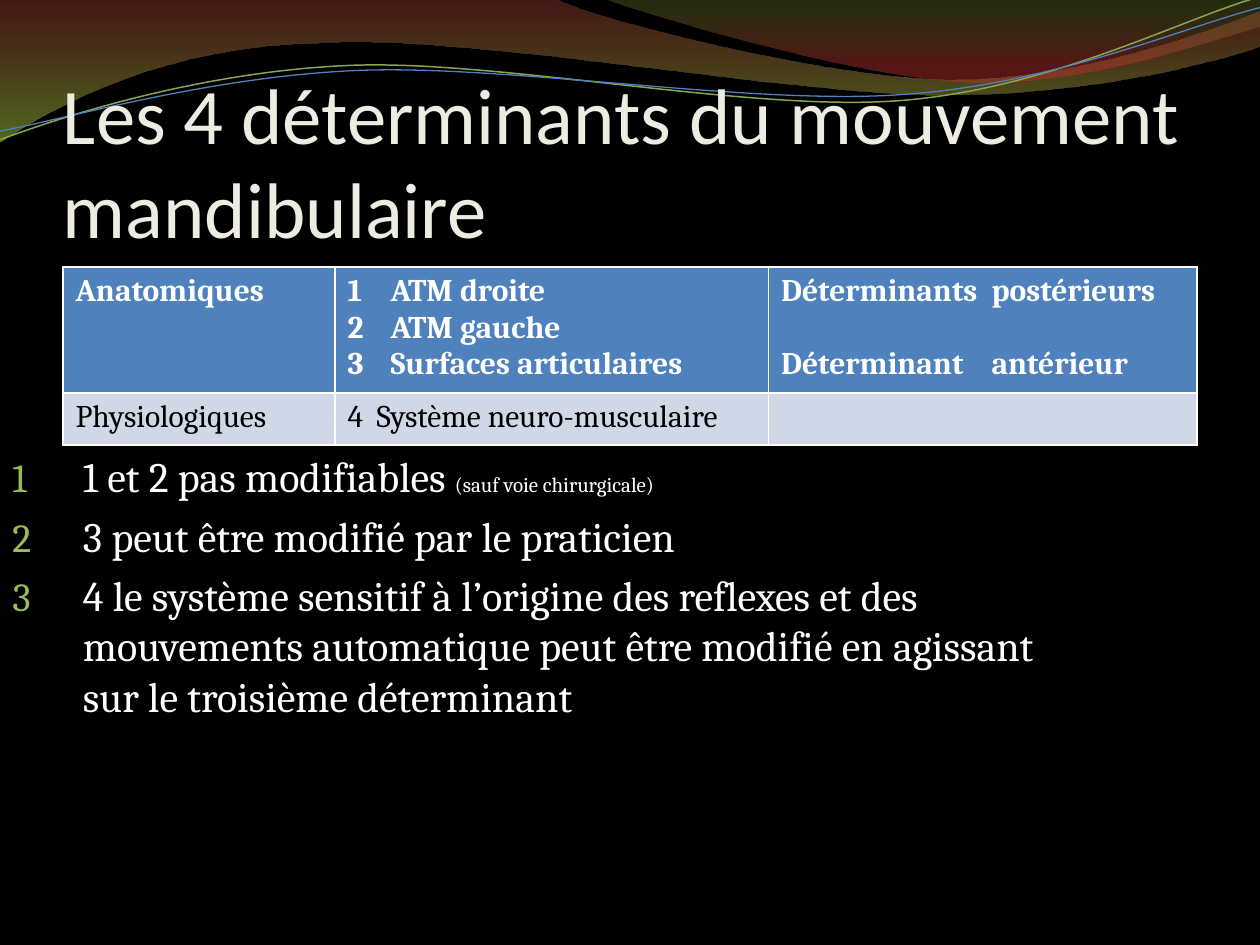
import pptx
import pptx.dml.color
import pptx.enum.text
import pptx.oxml
import pptx.oxml.ns
import pptx.util
from pptx.dml.color import RGBColor
from pptx.util import Inches

BLACK = RGBColor(0, 0, 0)
WHITE = RGBColor(255, 255, 255)
CREAM = RGBColor(0xEE, 0xEC, 0xE1)
BLUE = RGBColor(0x4F, 0x81, 0xBD)
PALE_BLUE = RGBColor(0xD0, 0xD8, 0xE8)
GREEN = RGBColor(0x9B, 0xBB, 0x59)
LINE_GREEN = RGBColor(0x89, 0xA5, 0x4F)
WAVE_RED = RGBColor(0x97, 0x33, 0x30)
WAVE_GREEN = RGBColor(0x95, 0xC2, 0x38)
VALLEY_GREEN = RGBColor(0x76, 0x95, 0x37)
VALLEY_RED = RGBColor(0xBE, 0x33, 0x30)

WAVE = [(0, 0), (4.4, -0.01),
        (4.76, 0.17, 6.64, 0.63, 7.58, 0.63), (8.53, 0.63, 9.58, 0.26, 10, 0.09), (10.01, 0.36),
        (9.83, 0.44, 8.7, 0.76, 7.46, 0.75), (6.22, 0.75, 3.82, 0.28, 2.57, 0.34),
        (1.29, 0.36, 0.46, 0.83, -0.01, 1.13)]
VALLEY = [(4.79, -0.01), (5.09, 0.11, 6.82, 0.62, 7.69, 0.65),
          (8.56, 0.69, 9.61, 0.32, 10, 0.21), (10, 0)]
GREEN_CURVE = [(0, 1.11), (0.48, 0.93, 1.58, 0.57, 2.77, 0.52),
               (3.95, 0.47, 5.93, 0.89, 7.13, 0.8), (8.33, 0.71, 9.38, 0.15, 9.98, -0.02)]
BLUE_CURVE = [(0, 1.04), (0.47, 0.96, 1.64, 0.61, 2.83, 0.56),
              (4.03, 0.51, 5.97, 0.84, 7.17, 0.75), (8.36, 0.67, 9.41, 0.21, 10, 0.06)]

HEADER_ROW = (["Anatomiques"],
              ["1\tATM droite", "2\tATM gauche", "3\tSurfaces articulaires"],
              ["Déterminants\tpostérieurs", "Déterminant\tantérieur"])
BODY_ROW = (["Physiologiques"], ["4\tSystème neuro-musculaire"], [])
POINTS = [
    [("1 et 2 pas modifiables ", 24), ("(sauf voie chirurgicale)", 12)],
    [("3 peut être modifié par le praticien", 24)],
    [("4 le système sensitif à l’origine des reflexes et des mouvements automatique "
      "peut être modifié en agissant sur le troisième déterminant", 24)],
]


def element(markup):
    """Parse one drawing element."""
    namespace = pptx.oxml.ns.nsdecls("a")
    return pptx.oxml.parse_xml(markup.replace(" ", f" {namespace} ", 1))


def add_run(paragraph, text, size, font, color, bold=False):
    """Add one formatted run."""
    run = paragraph.add_run()
    run.text = text
    run.font.name = font
    run.font.size = pptx.util.Pt(size)
    run.font.bold = bold
    run.font.color.rgb = color


def add_curve(slide, left, top, segments, closed):
    """Draw an outline of corners and cubic curves relative to a corner."""
    anchors = [(Inches(left + segment[-2]), Inches(top + segment[-1])) for segment in segments]
    builder = slide.shapes.build_freeform(*anchors[0])
    builder.add_line_segments(anchors[1:], close=closed)
    shape = builder.convert_to_shape()
    shape.shadow.inherit = False
    lines = list(shape._element.iter(pptx.oxml.ns.qn("a:lnTo")))
    for line, segment in zip(lines, segments[1:]):
        if len(segment) == 6:
            points = "".join(
                f'<a:pt x="{Inches(left + x) - shape.left}" y="{Inches(top + y) - shape.top}"/>'
                for x, y in zip(segment[::2], segment[1::2]))
            line.getparent().replace(
                line, element(f"<a:cubicBezTo >{points}</a:cubicBezTo>"))
    return shape


def add_banner(slide, left, top):
    """Draw the translucent waves and the two thin curves."""
    for outline, stops in (
            (WAVE, ((0, WAVE_RED, 45), (1, WAVE_GREEN, 55))),
            (VALLEY, ((0, VALLEY_GREEN, 30), (0.8, VALLEY_RED, 45)))):
        shape = add_curve(slide, left, top, outline, True)
        shape.line.fill.background()
        shape.fill.gradient()
        shape.fill.gradient_angle = 270
        for stop, (position, color, _) in zip(shape.fill.gradient_stops, stops):
            stop.position = position
            stop.color.rgb = color
        colors = list(shape._element.spPr.iter(pptx.oxml.ns.qn("a:srgbClr")))
        for color_element, (_, _, opacity) in zip(colors, stops):
            color_element.append(element(f'<a:alpha val="{opacity * 1000}"/>'))
    for outline, color, width in ((GREEN_CURVE, LINE_GREEN, 0.85), (BLUE_CURVE, BLUE, 0.75)):
        shape = add_curve(slide, left, top, outline, False)
        shape.fill.background()
        shape.line.color.rgb = color
        shape.line.width = pptx.util.Pt(width)


def add_title(slide, left, top, width, height):
    """Place the slide title."""
    frame = slide.shapes.add_textbox(
        Inches(left), Inches(top), Inches(width), Inches(height)).text_frame
    frame.word_wrap = True
    frame.vertical_anchor = pptx.enum.text.MSO_ANCHOR.BOTTOM
    frame.margin_left = frame.margin_right = frame.margin_bottom = 0
    add_run(frame.paragraphs[0], "Les 4 déterminants du mouvement mandibulaire",
            45, "Calibri", CREAM)


def add_determinants_table(slide, left, top, width, height):
    """Place the table of determinants."""
    table = slide.shapes.add_table(
        2, 3, Inches(left), Inches(top), Inches(width), Inches(height)).table
    for column, column_width in zip(table.columns, (2.16, 3.44, width - 5.6)):
        column.width = Inches(column_width)
    table.rows[0].height = Inches(height - 0.41)
    table.rows[1].height = Inches(0.41)
    styles = ((HEADER_ROW, BLUE, WHITE, True, (0, 0.34, 1.67)),
              (BODY_ROW, PALE_BLUE, BLACK, False, (0, 0.23, 0)))
    for row, (texts, fill, color, bold, tabs) in enumerate(styles):
        for column, (lines, tab) in enumerate(zip(texts, tabs)):
            cell = table.cell(row, column)
            cell.fill.solid()
            cell.fill.fore_color.rgb = fill
            for index, line in enumerate(lines):
                frame = cell.text_frame
                paragraph = frame.add_paragraph() if index else frame.paragraphs[0]
                if index and column == 2:
                    paragraph.space_before = pptx.util.Pt(21)
                if tab:
                    paragraph._p.get_or_add_pPr().append(element(
                        f'<a:tabLst ><a:tab pos="{Inches(tab)}" algn="l"/></a:tabLst>'))
                add_run(paragraph, line, 18, "Cambria", color, bold)


def add_numbered_points(slide, left, top, width, height):
    """Place the numbered remarks."""
    frame = slide.shapes.add_textbox(
        Inches(left), Inches(top), Inches(width), Inches(height)).text_frame
    frame.word_wrap = True
    for index, runs in enumerate(POINTS):
        paragraph = frame.add_paragraph() if index else frame.paragraphs[0]
        paragraph.space_before = pptx.util.Pt(5)
        properties = paragraph._p.get_or_add_pPr()
        properties.set("marL", str(Inches(0.56)))
        properties.set("indent", str(-Inches(0.56)))
        for markup in (f'<a:buClr ><a:srgbClr val="{GREEN}"/></a:buClr>',
                       '<a:buSzPct val="95000"/>',
                       '<a:buFont typeface="Cambria"/>',
                       '<a:buAutoNum type="arabicPlain"/>'):
            properties.append(element(markup))
        for text, size in runs:
            add_run(paragraph, text, size, "Cambria", WHITE)


def main():
    """Build and save the slide."""
    presentation = pptx.Presentation()
    presentation.slide_width = Inches(10)
    presentation.slide_height = Inches(7.5)
    slide = presentation.slides.add_slide(presentation.slide_layouts[6])
    slide.background.fill.solid()
    slide.background.fill.fore_color.rgb = BLACK
    add_banner(slide, 0, 0)
    add_title(slide, 0.5, 0.77, 9, 1.25)
    add_determinants_table(slide, 0.5, 2.12, 9, 1.38)
    add_numbered_points(slide, 0, 3.53, 8.59, 1.92)
    presentation.save("out.pptx")


if __name__ == "__main__":
    main()
